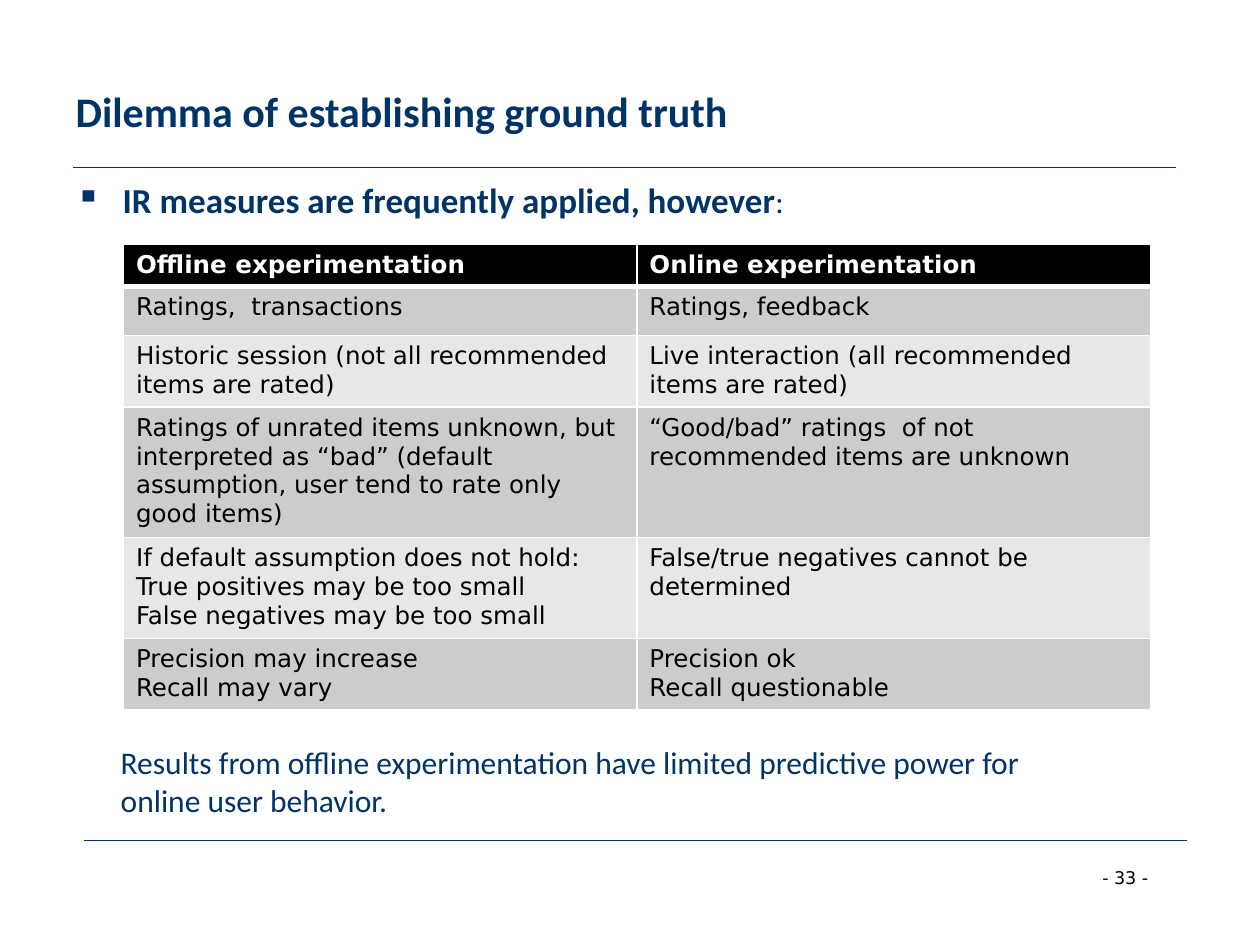
from dataclasses import dataclass

import pptx
import pptx.dml.color
import pptx.enum.shapes
import pptx.enum.text
import pptx.oxml
import pptx.oxml.ns
import pptx.util

# The slide is a grid of 100 columns by 75 rows
COLUMNS, ROWS = 100, 75
SLIDE_WIDTH, SLIDE_HEIGHT = pptx.util.Inches(10), pptx.util.Inches(7.5)


@dataclass(frozen=True)
class Theme:
    navy: str = "003366"
    black: str = "000000"
    white: str = "FFFFFF"
    bands: tuple = ("CCCCCC", "E7E7E7")
    heading_font: str = "Calibri"
    table_font: str = "DejaVu Sans"
    title_size: int = 24
    lead_size: int = 20
    body_size: int = 18
    table_size: int = 14
    page_size: int = 10
    rule_width: float = 0.75
    border_width: int = 1
    header_border_width: int = 3


THEME = Theme()

# Each cell is a list of paragraphs; "\n" is a line break
HEADER = (["Offline experimentation"], ["Online experimentation"])
COMPARISON = (
    (["Ratings,  transactions"], ["Ratings, feedback"]),
    (["Historic session (not all recommended items are rated)"],
     ["Live interaction (all recommended items are rated)"]),
    (["Ratings of unrated items unknown, but interpreted as “bad” "
      "(default assumption, user tend to rate only good items)"],
     ["“Good/bad” ratings  of not recommended items are unknown"]),
    (["If default assumption does not hold:",
      "True positives may be too small",
      "False negatives may be too small"],
     ["False/true negatives cannot be determined"]),
    (["Precision may increase\nRecall may vary"],
     ["Precision ok\nRecall questionable"]),
)
ROW_HEIGHTS = (3.2, 3.9, 5.6, 10.1, 7.9, 5.5)


def across(columns):
    return round(SLIDE_WIDTH * columns / COLUMNS)


def down(rows):
    return round(SLIDE_HEIGHT * rows / ROWS)


def area(left, top, width, height):
    return across(left), down(top), across(width), down(height)


def rgb(color):
    return pptx.dml.color.RGBColor.from_string(color)


def add_run(paragraph, text, font, size, color, bold=False):
    for index, line in enumerate(text.split("\n")):
        if index:
            paragraph.add_line_break()
        run = paragraph.add_run()
        run.text = line
        run.font.name = font
        run.font.size = pptx.util.Pt(size)
        run.font.bold = bold
        run.font.color.rgb = rgb(color)


def add_title(slide, text):
    title = slide.shapes.title
    title.left, title.top, title.width, title.height = area(5, 2.5, 90, 12.5)
    frame = title.text_frame
    frame.auto_size = pptx.enum.text.MSO_AUTO_SIZE.NONE
    frame.vertical_anchor = pptx.enum.text.MSO_ANCHOR.MIDDLE
    paragraph = frame.paragraphs[0]
    paragraph.alignment = pptx.enum.text.PP_ALIGN.LEFT
    add_run(paragraph, text, THEME.heading_font, THEME.title_size, THEME.navy, True)


def add_text(slide, box):
    frame = slide.shapes.add_textbox(*area(*box)).text_frame
    frame.word_wrap = True
    return frame.paragraphs[0]


def indent(paragraph, margin, hanging=0, bullet=None):
    properties = paragraph._p.get_or_add_pPr()
    properties.set("marL", str(across(margin)))
    properties.set("indent", str(-across(hanging)))
    if bullet:
        mark = pptx.oxml.parse_xml(
            f'<a:buChar {pptx.oxml.ns.nsdecls("a")} char="{bullet}"/>')
        properties.append(mark)


def add_rule(slide, left, top, length):
    rule = slide.shapes.add_connector(
        pptx.enum.shapes.MSO_CONNECTOR.STRAIGHT,
        across(left), down(top), across(left + length), down(top))
    rule.line.color.rgb = rgb(THEME.navy)
    rule.line.width = pptx.util.Pt(THEME.rule_width)
    rule._element.spPr.append(
        pptx.oxml.parse_xml(f'<a:effectLst {pptx.oxml.ns.nsdecls("a")}/>'))


def set_borders(cell, bottom_width):
    properties = cell._tc.get_or_add_tcPr()
    thin = THEME.border_width
    sides = (("lnL", thin), ("lnR", thin), ("lnT", thin), ("lnB", bottom_width))
    for position, (side, width) in enumerate(sides):
        border = pptx.oxml.parse_xml(
            f'<a:{side} {pptx.oxml.ns.nsdecls("a")} w="{pptx.util.Pt(width)}">'
            f'<a:solidFill><a:srgbClr val="{THEME.white}"/></a:solidFill></a:{side}>')
        properties.insert(position, border)


def fill_cell(cell, paragraphs, fill, color, is_header):
    cell.fill.solid()
    cell.fill.fore_color.rgb = rgb(fill)
    set_borders(cell, THEME.header_border_width if is_header else THEME.border_width)
    frame = cell.text_frame
    for index, text in enumerate(paragraphs):
        paragraph = frame.add_paragraph() if index else frame.paragraphs[0]
        add_run(paragraph, text, THEME.table_font, THEME.table_size, color, is_header)


def add_comparison(slide):
    content = (HEADER, *COMPARISON)
    table = slide.shapes.add_table(
        len(content), len(HEADER), *area(9.8, 19.4, 81.5, sum(ROW_HEIGHTS))).table
    for row, height in zip(table.rows, ROW_HEIGHTS):
        row.height = down(height)
    for number, cells in enumerate(content):
        is_header = number == 0
        fill = THEME.black if is_header else THEME.bands[(number - 1) % 2]
        color = THEME.white if is_header else THEME.black
        for column, paragraphs in enumerate(cells):
            fill_cell(table.cell(number, column), paragraphs, fill, color, is_header)


def main():
    deck = pptx.Presentation()
    deck.slide_width, deck.slide_height = SLIDE_WIDTH, SLIDE_HEIGHT
    slide = deck.slides.add_slide(deck.slide_layouts[5])

    # Frame: rules and page number
    add_rule(slide, 5.8, 13.3, 87.5)
    add_rule(slide, 6.7, 66.7, 87.5)
    page = add_text(slide, (86.5, 68.3, 7.6, 2.7))
    add_run(page, "- 33 -", THEME.table_font, THEME.page_size, THEME.black)

    # Title and lead statement
    add_title(slide, "Dilemma of establishing ground truth")
    lead = add_text(slide, (5, 13.7, 93.8, 7.2))
    indent(lead, 3.75, hanging=3.75, bullet="▪")
    add_run(lead, "IR measures are frequently applied, however",
            THEME.heading_font, THEME.lead_size, THEME.navy, True)
    add_run(lead, ":", THEME.heading_font, THEME.body_size, THEME.navy)

    # Offline against online
    add_comparison(slide)

    # Conclusion
    conclusion = add_text(slide, (3.6, 58.5, 93.8, 8.9))
    indent(conclusion, 5)
    add_run(conclusion,
            "Results from offline experimentation have limited predictive power for\n"
            "online user behavior.",
            THEME.heading_font, THEME.body_size, THEME.navy)

    deck.save("out.pptx")


if __name__ == "__main__":
    main()
